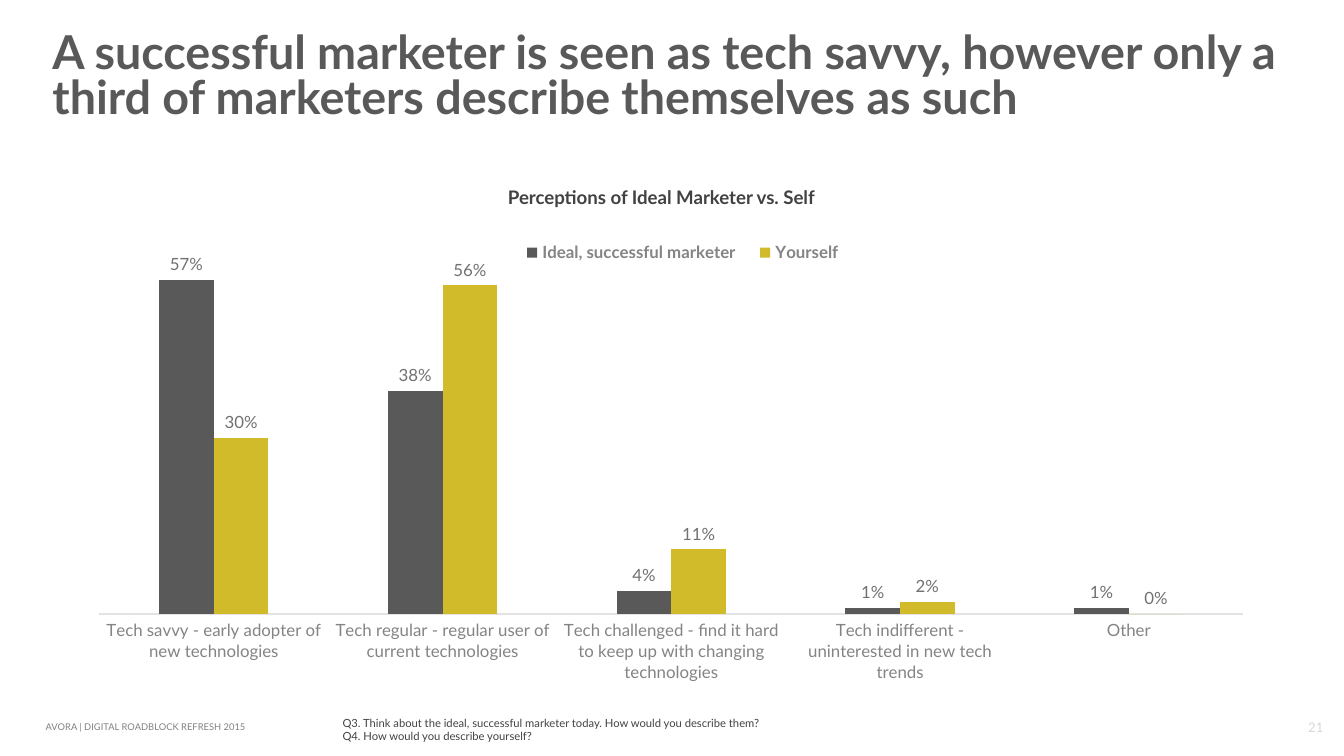
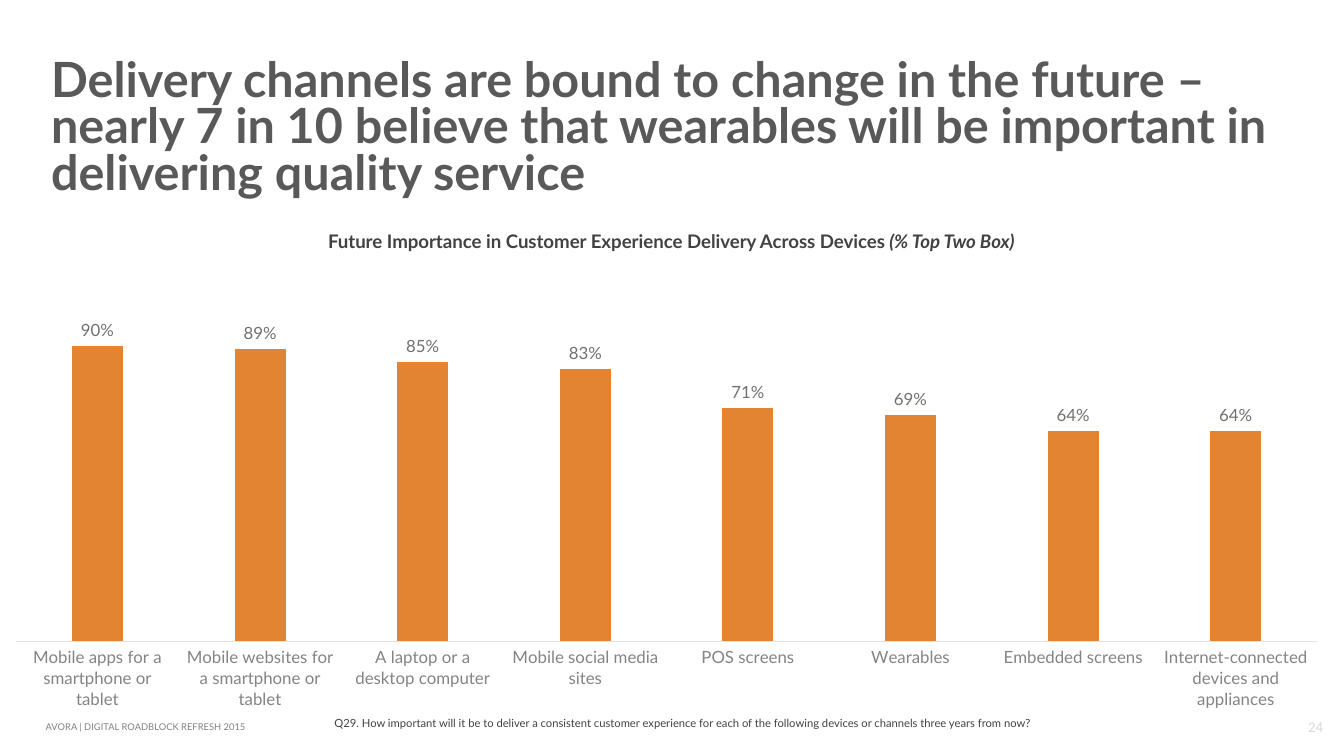
from lxml import etree
from pptx import Presentation
from pptx.chart.data import CategoryChartData
from pptx.dml.color import RGBColor
from pptx.enum.chart import XL_CHART_TYPE, XL_LABEL_POSITION, XL_LEGEND_POSITION, XL_TICK_MARK
from pptx.enum.text import MSO_ANCHOR, MSO_AUTO_SIZE, PP_ALIGN
from pptx.oxml.ns import qn
from pptx.util import Inches, Pt

COLUMNS = XL_CHART_TYPE.COLUMN_CLUSTERED
OUTSIDE = XL_LABEL_POSITION.OUTSIDE_END
LEGEND_TOP = XL_LEGEND_POSITION.TOP
NO_TICK = XL_TICK_MARK.NONE
LEFT, CENTER = PP_ALIGN.LEFT, PP_ALIGN.CENTER
TOP, MIDDLE, BOTTOM = MSO_ANCHOR.TOP, MSO_ANCHOR.MIDDLE, MSO_ANCHOR.BOTTOM

W = 10
H = W * 9 / 16
FONT = "Lato"
COLORS = {
    "title": "595959", "text": "424242", "axis": "848484", "label": "717171",
    "rule": "E3E3E3", "footer": "808080", "number": "D9D9D9",
    "gray": "595959", "yellow": "D1BB2A", "orange": "E38432",
}
FOOTER = "AVORA | DIGITAL ROADBLOCK REFRESH 2015"

SLIDES = [
    {
        "number": "21",
        "title": "A successful marketer is seen as tech savvy, however only a "
                 "third of marketers describe themselves as such",
        "title_box": (0.29, 0.2, 9.5, 0.77),
        "title_size": 25,
        "heading": [("Perceptions of Ideal Marketer vs. Self", False)],
        "heading_box": (3.78, 1.38, 2.47, 0.17),
        "heading_align": LEFT,
        "questions": [
            "Q3. Think about the ideal, successful marketer today. How would you describe them?",
            "Q4. How would you describe yourself?",
        ],
        "questions_box": (2.45, 5.28, 5.48, 0.3),
        "chart_box": (0.56, 1.55, 8.87, 3.6),
        "plot": (0.18, 0.4, 8.51, 2.62),
        "legend": (3.22, 0.22, 2.6, 0.22),
        "maximum": 0.6,
        "categories": [
            "Tech savvy - early adopter of new technologies",
            "Tech regular - regular user of current technologies",
            "Tech challenged - find it hard to keep up with changing technologies",
            "Tech indifferent - uninterested in new tech trends",
            "Other",
        ],
        "series": [
            ("Ideal, successful marketer", "gray", (0.57, 0.38, 0.04, 0.01, 0.01)),
            ("Yourself", "yellow", (0.3, 0.56, 0.11, 0.02, 0)),
        ],
    },
    {
        "number": "24",
        "title": "Delivery channels are bound to change in the future – nearly 7 in 10 "
                 "believe that wearables will be important in delivering quality service",
        "title_box": (0.28, 0.39, 9.5, 1.15),
        "title_size": 26,
        "heading": [
            ("Future Importance in Customer Experience Delivery Across Devices ", False),
            ("(% Top Two Box)", True),
        ],
        "heading_box": (0.96, 1.71, 8.07, 0.17),
        "heading_align": CENTER,
        "questions": [
            "Q29. How important will it be to deliver a consistent customer experience for "
            "each of the following devices or channels three years from now?",
        ],
        "questions_box": (2.39, 5.28, 6.02, 0.2),
        "chart_box": (0, 1.88, W, 3.4),
        "plot": (0.12, 0.45, 9.68, 2.45),
        "legend": None,
        "maximum": 1,
        "categories": [
            "Mobile apps for a smartphone or tablet",
            "Mobile websites for a smartphone or tablet",
            "A laptop or a desktop computer",
            "Mobile social media sites",
            "POS screens",
            "Wearables",
            "Embedded screens",
            "Internet-connected devices and appliances",
        ],
        "series": [
            ("Series 1", "orange", (0.9, 0.89, 0.85, 0.83, 0.71, 0.69, 0.64, 0.64)),
        ],
    },
]


def rgb(name):
    return RGBColor.from_string(COLORS[name])


def inches(box):
    return [Inches(v) for v in box]


def style(font, size, color, bold=False, name=FONT):
    font.name, font.size, font.bold = name, Pt(size), bold
    font.color.rgb = rgb(color)


def add_text(s, box, paragraphs, size, color, bold=False, name=FONT,
             align=LEFT, anchor=TOP, inset=True, wrap=True):
    tf = s.shapes.add_textbox(*inches(box)).text_frame
    tf.word_wrap, tf.vertical_anchor = wrap, anchor
    if not inset:
        tf.margin_left = tf.margin_right = tf.margin_top = tf.margin_bottom = 0
    for i, runs in enumerate(paragraphs):
        p = tf.add_paragraph() if i else tf.paragraphs[0]
        p.alignment = align
        style(p.font, size, color, bold, name)
        for text, italic in runs:
            r = p.add_run()
            r.text = text
            if italic:
                r.font.italic = True


def set_layout(parent, box, chart_box, before, inner=False):
    for old in parent.findall(qn("c:layout")):
        parent.remove(old)
    layout = etree.Element(qn("c:layout"))
    manual = etree.SubElement(layout, qn("c:manualLayout"))
    _, _, width, height = chart_box
    shares = [v / total for v, total in zip(box, (width, height) * 2)]
    values = [("layoutTarget", "inner")] if inner else []
    values += [("xMode", "edge"), ("yMode", "edge"), *zip("xywh", shares)]
    for tag, value in values:
        etree.SubElement(manual, qn(f"c:{tag}")).set("val", str(value))
    parent.find(qn(f"c:{before}")).addprevious(layout)


def add_columns(s, d):
    data = CategoryChartData(number_format="0%")
    data.categories = d["categories"]
    for name, _, values in d["series"]:
        data.add_series(name, values)
    chart = s.shapes.add_chart(COLUMNS, *inches(d["chart_box"]), data).chart
    style(chart.font, 10, "text", name="Cabin")
    chart.has_title = False

    axis = chart.category_axis
    axis.major_tick_mark = axis.minor_tick_mark = NO_TICK
    axis.format.line.color.rgb = rgb("rule")
    axis.format.line.width = Pt(0.75)
    style(axis.tick_labels.font, 9, "axis")
    axis = chart.value_axis
    axis.visible = axis.has_major_gridlines = False
    axis.minimum_scale, axis.maximum_scale = 0, d["maximum"]
    axis.tick_labels.number_format = "0%"
    axis.tick_labels.number_format_is_linked = False

    plot = chart.plots[0]
    plot.gap_width, plot.overlap, plot.vary_by_categories = 219, 0, False
    for series, (_, color, _) in zip(plot.series, d["series"]):
        series.format.fill.solid()
        series.format.fill.fore_color.rgb = rgb(color)
        labels = series.data_labels
        labels.show_value, labels.position = True, OUTSIDE
        labels.number_format, labels.number_format_is_linked = "0%", False
        style(labels.font, 9, "label")
    area = plot._element.getparent()
    set_layout(area, d["plot"], d["chart_box"], "barChart", inner=True)

    chart.has_legend = bool(d["legend"])
    if d["legend"]:
        legend = chart.legend
        legend.position, legend.include_in_layout = LEGEND_TOP, False
        style(legend.font, 9, "axis", bold=True)
        set_layout(legend._element, d["legend"], d["chart_box"], "overlay")


def add_title(s, d):
    sp = s.shapes.title
    sp.left, sp.top, sp.width, sp.height = inches(d["title_box"])
    tf = sp.text_frame
    tf.text = d["title"]
    tf.word_wrap, tf.vertical_anchor = True, MIDDLE
    tf.auto_size = MSO_AUTO_SIZE.NONE
    p = tf.paragraphs[0]
    p.alignment, p.line_spacing = LEFT, 0.8
    style(p.font, d["title_size"], "title", bold=True)


def add_footer(s, number):
    add_text(s, (0.34, 5.37, 4.16, 0.08), [[(FOOTER, False)]], 5, "footer",
             anchor=MIDDLE, inset=False)
    add_text(s, (9.65, 5.34, 0.28, 0.13), [[(number, False)]], 8, "number",
             name="Calibri", align=CENTER, anchor=BOTTOM, inset=False)


def main():
    prs = Presentation()
    prs.slide_width, prs.slide_height = Inches(W), Inches(H)
    for d in SLIDES:
        s = prs.slides.add_slide(prs.slide_layouts[5])
        add_footer(s, d["number"])
        add_title(s, d)
        add_text(s, d["questions_box"], [[(q, False)] for q in d["questions"]], 6, "text")
        add_columns(s, d)
        add_text(s, d["heading_box"], [d["heading"]], 10, "text", bold=True,
                 align=d["heading_align"], inset=False,
                 wrap=d["heading_align"] == CENTER)
    prs.save("out.pptx")


if __name__ == "__main__":
    main()
